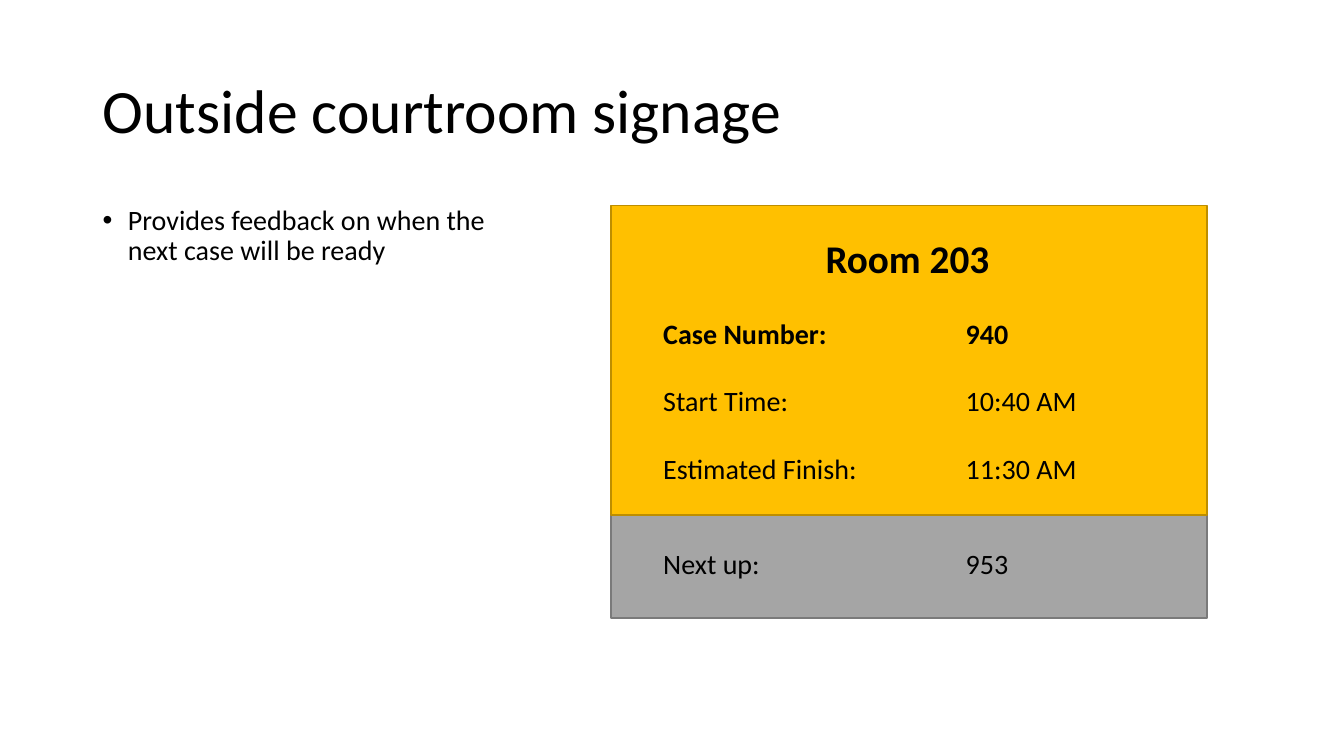
from lxml import etree
from pptx import Presentation
from pptx.dml.color import RGBColor
from pptx.enum.shapes import MSO_SHAPE
from pptx.enum.text import MSO_ANCHOR, MSO_AUTO_SIZE, PP_ALIGN
from pptx.oxml.ns import qn
from pptx.util import Inches, Pt

RECTANGLE = MSO_SHAPE.RECTANGLE
MIDDLE, TOP = MSO_ANCHOR.MIDDLE, MSO_ANCHOR.TOP
NO_AUTOFIT = MSO_AUTO_SIZE.NONE
LEFT, CENTER = PP_ALIGN.LEFT, PP_ALIGN.CENTER

BLACK = RGBColor(0x00, 0x00, 0x00)
AMBER = RGBColor(0xFF, 0xC0, 0x00)
AMBER_EDGE = RGBColor(0xBD, 0x8E, 0x00)
GRAY = RGBColor(0xA5, 0xA5, 0xA5)
GRAY_EDGE = RGBColor(0x7A, 0x7A, 0x7A)

FONT = "Calibri"
TITLE_ONLY = 5
SIGN_LEFT, SIGN_WIDTH = 6.06, 5.91
VALUE_TAB = Inches(3)
ROW_GAP = Pt(24.4)

CURRENT_CASE = [
    ("Case Number:", "940", True),
    ("Start Time:", "10:40 AM", False),
    ("Estimated Finish:", "11:30 AM", False),
]


def set_attributes(target, **values):
    for name, value in values.items():
        setattr(target, name, value)


def write(paragraph, text, size=20, bold=False, **paragraph_format):
    set_attributes(paragraph, **paragraph_format)
    run = paragraph.add_run()
    run.text = text
    set_attributes(run.font, name=FONT, size=Pt(size), bold=bold)
    run.font.color.rgb = BLACK


def write_row(paragraph, label, value, bold=False, **paragraph_format):
    """Write a label and its value, lined up at a tab stop."""
    write(paragraph, f"{label}\t{value}", bold=bold, **paragraph_format)
    stops = etree.SubElement(paragraph._p.get_or_add_pPr(), qn("a:tabLst"))
    etree.SubElement(stops, qn("a:tab"), pos=str(VALUE_TAB), algn="l")


def add_bullet(paragraph):
    properties = paragraph._p.get_or_add_pPr()
    properties.set("marL", str(Inches(0.25)))
    properties.set("indent", str(Inches(-0.25)))
    etree.SubElement(properties, qn("a:buFont"), typeface="Arial")
    etree.SubElement(properties, qn("a:buChar"), char="•")


def add_text_frame(shapes, left, top, width, height):
    box = shapes.add_textbox(Inches(left), Inches(top), Inches(width), Inches(height))
    set_attributes(box.text_frame, word_wrap=True, vertical_anchor=TOP)
    return box.text_frame


def add_panel(shapes, top, height, fill, edge):
    panel = shapes.add_shape(RECTANGLE, Inches(SIGN_LEFT), Inches(top),
                             Inches(SIGN_WIDTH), Inches(height))
    panel.shadow.inherit = False
    panel.fill.solid()
    panel.fill.fore_color.rgb = fill
    panel.line.color.rgb = edge
    panel.line.width = Pt(1)


def add_title(slide, text):
    title = slide.shapes.title
    set_attributes(title, left=Inches(0.92), top=Inches(0.4),
                   width=Inches(11.5), height=Inches(1.45))
    set_attributes(title.text_frame, word_wrap=True, vertical_anchor=MIDDLE,
                   auto_size=NO_AUTOFIT)
    write(title.text_frame.paragraphs[0], text, size=44,
          alignment=LEFT, line_spacing=0.9)


def add_explanation(slide, text):
    paragraph = add_text_frame(slide.shapes, 0.92, 2, 4.11, 4.76).paragraphs[0]
    write(paragraph, text, line_spacing=0.9)
    add_bullet(paragraph)


def add_sign(slide):
    sign = slide.shapes.add_group_shape().shapes
    add_panel(sign, 2.67, 3.46, GRAY, GRAY_EDGE)
    add_panel(sign, 2.04, 3.07, AMBER, AMBER_EDGE)

    next_case = add_text_frame(sign, 6.48, 5.37, 5, 0.44)
    write_row(next_case.paragraphs[0], "Next up:", "953")

    current_case = add_text_frame(sign, 6.48, 2.28, 5.04, 2.59)
    write(current_case.paragraphs[0], "Room 203", size=28, bold=True, alignment=CENTER)
    for label, value, bold in CURRENT_CASE:
        write_row(current_case.add_paragraph(), label, value, bold,
                  space_before=ROW_GAP)


def main():
    presentation = Presentation()
    set_attributes(presentation, slide_width=Inches(13.33), slide_height=Inches(7.5))
    slide = presentation.slides.add_slide(presentation.slide_layouts[TITLE_ONLY])
    add_title(slide, "Outside courtroom signage")
    add_explanation(slide, "Provides feedback on when the next case will be ready")
    add_sign(slide)
    presentation.save("out.pptx")


if __name__ == "__main__":
    main()
